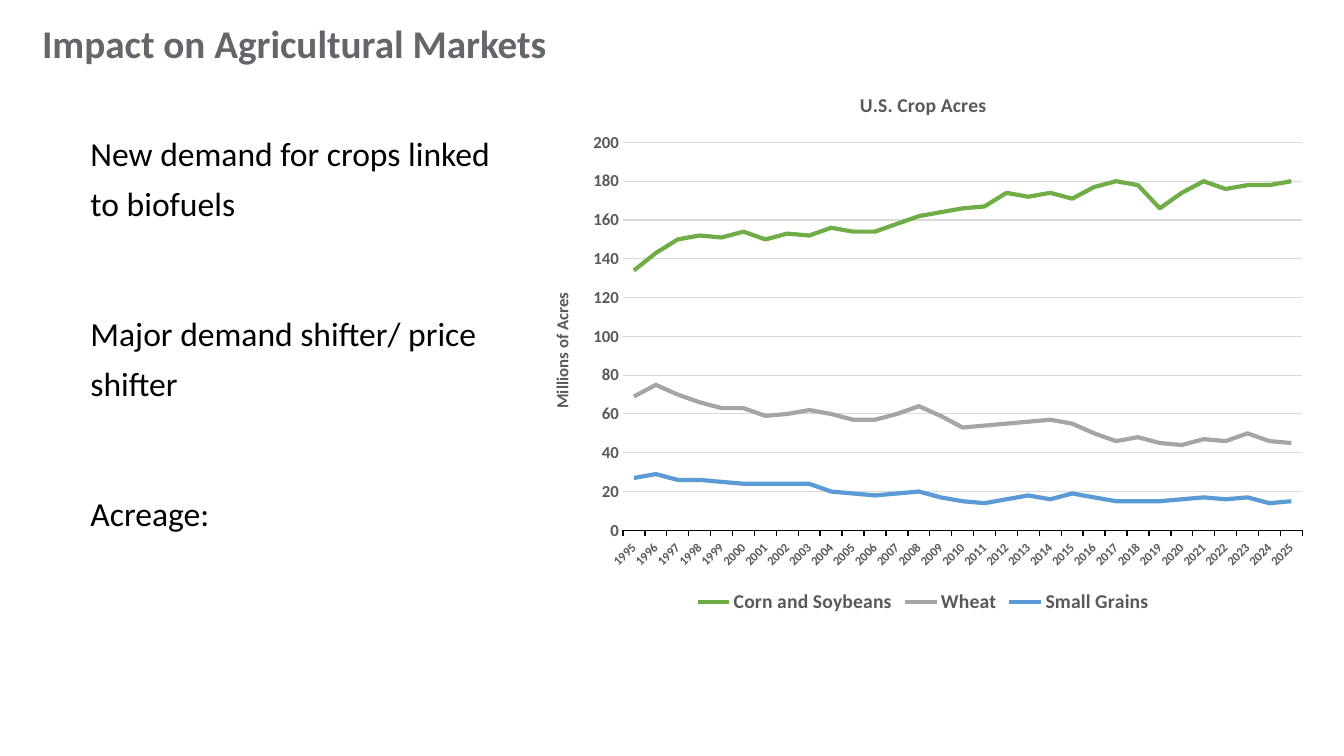
"""Build the slide on biofuel demand and U.S. crop acres."""
import pptx
import pptx.chart.data
import pptx.dml.color
import pptx.enum.chart
import pptx.enum.text
import pptx.oxml
import pptx.oxml.ns
import pptx.util

Cm = pptx.util.Cm
Pt = pptx.util.Pt
GRAY = "595959"


def color(hex_string):
    return pptx.dml.color.RGBColor.from_string(hex_string)


def style(font, size, hex_string, bold=True):
    font.name = "Calibri"
    font.size = Pt(size)
    font.bold = bold
    font.color.rgb = color(hex_string)


presentation = pptx.Presentation()
presentation.slide_width = Cm(33.87)
presentation.slide_height = Cm(19.05)
slide = presentation.slides.add_slide(presentation.slide_layouts[6])

title_box = slide.shapes.add_textbox(Cm(0.81), Cm(0.64), Cm(15.72), Cm(1.17))
title_frame = title_box.text_frame
title_frame.word_wrap = True
title_frame.vertical_anchor = pptx.enum.text.MSO_ANCHOR.BOTTOM
paragraph = title_frame.paragraphs[0]
paragraph.line_spacing = 0.9
run = paragraph.add_run()
run.text = "Impact on Agricultural Markets"
style(run.font, 28, "63666A")

points = [
    "New demand for crops linked to biofuels",
    "Major demand shifter/ price shifter",
    "Acreage:",
]
points_box = slide.shapes.add_textbox(Cm(2.03), Cm(2.97), Cm(11.28), Cm(13.21))
points_frame = points_box.text_frame
points_frame.word_wrap = True
for index, point in enumerate(points):
    paragraph = points_frame.add_paragraph() if index else points_frame.paragraphs[0]
    paragraph.line_spacing = 1.25
    if index:
        paragraph.space_before = Pt(56.6)
    run = paragraph.add_run()
    run.text = point
    style(run.font, 24, "000000", bold=False)

crops = [
    ("Corn and Soybeans", "70AD47",
     [134, 143, 150, 152, 151, 154, 150, 153, 152, 156, 154, 154, 158, 162, 164, 166,
      167, 174, 172, 174, 171, 177, 180, 178, 166, 174, 180, 176, 178, 178, 180]),
    ("Wheat", "A5A5A5",
     [69, 75, 70, 66, 63, 63, 59, 60, 62, 60, 57, 57, 60, 64, 59, 53,
      54, 55, 56, 57, 55, 50, 46, 48, 45, 44, 47, 46, 50, 46, 45]),
    ("Small Grains", "5B9BD5",
     [27, 29, 26, 26, 25, 24, 24, 24, 24, 20, 19, 18, 19, 20, 17, 15,
      14, 16, 18, 16, 19, 17, 15, 15, 15, 16, 17, 16, 17, 14, 15]),
]
chart_data = pptx.chart.data.CategoryChartData(number_format="0")
chart_data.categories = [str(year) for year in range(1995, 2026)]
for name, line_color, acres in crops:
    chart_data.add_series(name, acres)
chart = slide.shapes.add_chart(
    pptx.enum.chart.XL_CHART_TYPE.LINE,
    Cm(13.31), Cm(1.8), Cm(19.91), Cm(13.77), chart_data).chart
style(chart.font, 10, "000000", bold=False)

for series, (name, line_color, acres) in zip(chart.plots[0].series, crops):
    series.smooth = False
    series.marker.style = pptx.enum.chart.XL_MARKER_STYLE.NONE
    series.format.line.width = Pt(3)
    series.format.line.color.rgb = color(line_color)
chart.plots[0].vary_by_categories = False

chart.has_title = True
year_axis = chart.category_axis
acre_axis = chart.value_axis
acre_axis.has_title = True
for heading, text, size in [
    (chart.chart_title, "U.S. Crop Acres", 14),
    (acre_axis.axis_title, "Millions of Acres", 12),
]:
    run = heading.text_frame.paragraphs[0].add_run()
    run.text = text
    style(run.font, size, GRAY)

chart.has_legend = True
chart.legend.position = pptx.enum.chart.XL_LEGEND_POSITION.BOTTOM
chart.legend.include_in_layout = False
style(chart.legend.font, 14, GRAY)

year_axis.major_tick_mark = pptx.enum.chart.XL_TICK_MARK.OUTSIDE
year_axis.format.line.color.rgb = color("000000")
year_axis.format.line.width = Pt(1)
style(year_axis.tick_labels.font, 9, GRAY)
label_body = year_axis._element.find(".//" + pptx.oxml.ns.qn("c:txPr")).find(
    pptx.oxml.ns.qn("a:bodyPr"))
label_body.set("rot", "-2700000")
label_body.set("vert", "horz")

acre_axis.minimum_scale = 0
acre_axis.maximum_scale = 200
acre_axis.major_unit = 20
acre_axis.major_tick_mark = pptx.enum.chart.XL_TICK_MARK.NONE
acre_axis.tick_labels.number_format = "0"
acre_axis.tick_labels.number_format_is_linked = False
acre_axis.format.line.fill.background()
acre_axis.major_gridlines.format.line.color.rgb = color("D9D9D9")
acre_axis.major_gridlines.format.line.width = Pt(0.75)
style(acre_axis.tick_labels.font, 12, GRAY)

plot_area = chart._chartSpace.chart.plotArea
for old_layout in plot_area.findall(pptx.oxml.ns.qn("c:layout")):
    plot_area.remove(old_layout)
plot_area.insert(0, pptx.oxml.parse_xml(
    f'<c:layout {pptx.oxml.ns.nsdecls("c")}><c:manualLayout>'
    '<c:layoutTarget val="inner"/><c:xMode val="edge"/><c:yMode val="edge"/>'
    '<c:x val="0.12"/><c:y val="0.13"/><c:w val="0.86"/><c:h val="0.71"/>'
    '</c:manualLayout></c:layout>'))

presentation.save("out.pptx")
